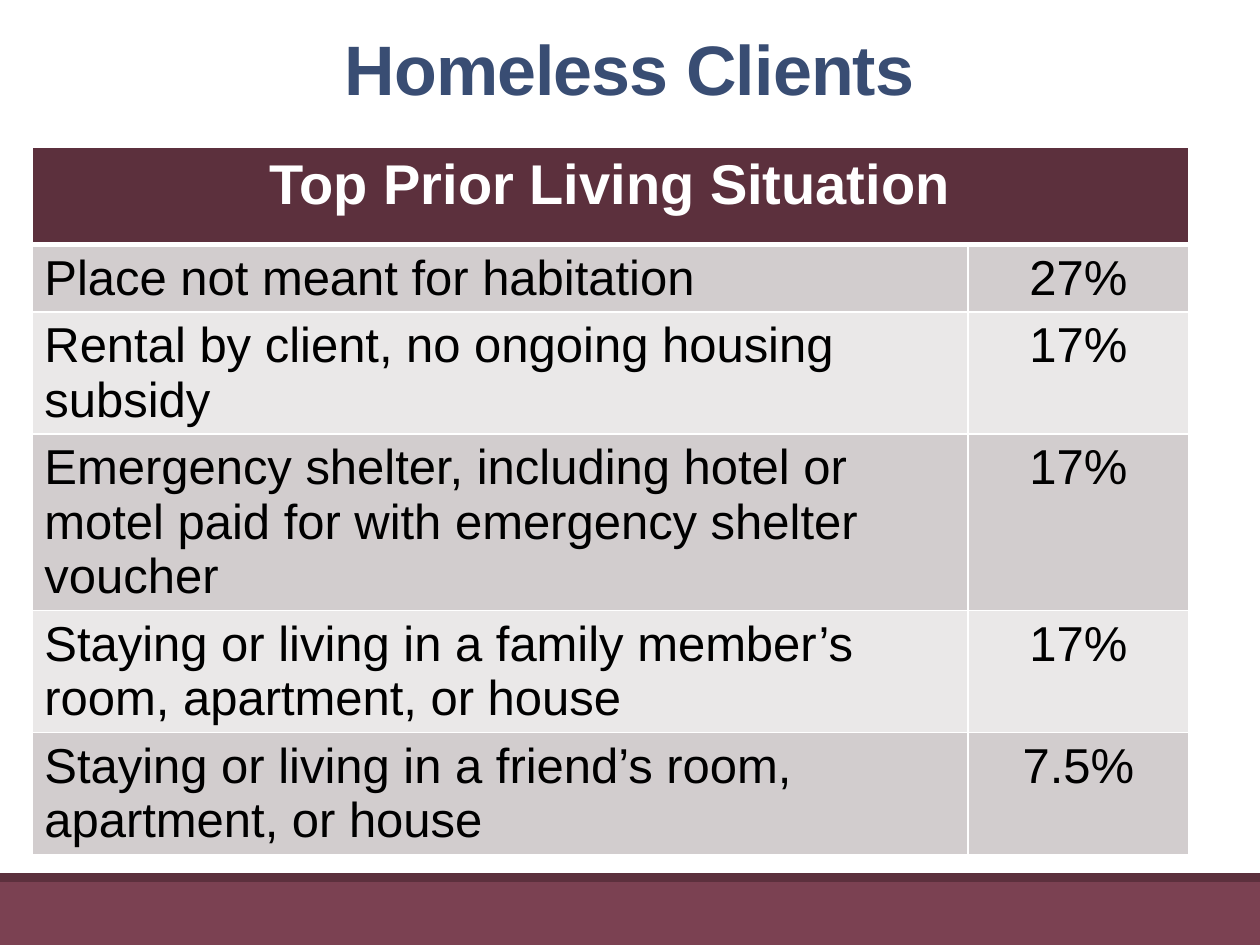
"""Build the slide on the top prior living situations of homeless clients."""
from lxml import etree
from pptx import Presentation
from pptx.dml.color import RGBColor
from pptx.enum.shapes import MSO_SHAPE
from pptx.enum.text import MSO_ANCHOR, PP_ALIGN
from pptx.oxml.ns import qn
from pptx.util import Pt

RECTANGLE = MSO_SHAPE.RECTANGLE
BOTTOM = MSO_ANCHOR.BOTTOM
LEFT, CENTER = PP_ALIGN.LEFT, PP_ALIGN.CENTER
FONT = "Arial"
COLORS = {
    "title": "394D73",
    "footer": "7B4152",
    "header": "5C303D",
    "odd": "D2CDCE",
    "even": "EAE8E8",
    "white": "FFFFFF",
    "black": "000000",
}
SITUATIONS = [
    ("Place not meant for habitation", "27%", 38.4),
    ("Rental by client, no ongoing housing subsidy", "17%", 69.7),
    ("Emergency shelter, including hotel or motel paid for with "
     "emergency shelter voucher", "17%", 101),
    ("Staying or living in a family member’s room, apartment, or house", "17%", 69.7),
    ("Staying or living in a friend’s room, apartment, or house", "7.5%", 69.7),
]


def format_text(paragraph, size, color, bold, alignment):
    paragraph.alignment = alignment
    for run in paragraph.runs:
        run.font.name = FONT
        run.font.size = Pt(size)
        run.font.bold = bold
        run.font.color.rgb = RGBColor.from_string(COLORS[color])


def paint_cell(cell, fill, top_width, bottom_width):
    properties = cell._tc.get_or_add_tcPr()
    for side, width in (("L", 1), ("R", 1), ("T", top_width), ("B", bottom_width)):
        border = etree.SubElement(properties, qn(f"a:ln{side}"), w=str(Pt(width)))
        border_fill = etree.SubElement(border, qn("a:solidFill"))
        etree.SubElement(border_fill, qn("a:srgbClr"), val=COLORS["white"])
    cell.fill.solid()
    cell.fill.fore_color.rgb = RGBColor.from_string(COLORS[fill])


prs = Presentation()
prs.slide_width, prs.slide_height = Pt(720), Pt(540)
slide = prs.slides.add_slide(prs.slide_layouts[5])

for color, top, height in (("footer", 504, 36), ("header", 499, 5)):
    band = slide.shapes.add_shape(RECTANGLE, Pt(0), Pt(top), Pt(720), Pt(height))
    band.shadow.inherit = False
    band.fill.solid()
    band.fill.fore_color.rgb = RGBColor.from_string(COLORS[color])
    band.line.fill.background()

title = slide.shapes.title
title.left, title.top, title.width, title.height = Pt(36), Pt(-48.2), Pt(643), Pt(114.5)
title.text_frame.text = "Homeless Clients"
title.text_frame.vertical_anchor = BOTTOM
heading = title.text_frame.paragraphs[0]
heading.line_spacing = 0.85
format_text(heading, 40, "title", True, CENTER)
heading._p.get_or_add_pPr().set("marL", str(Pt(4.3)))
heading.runs[0].font._element.set("spc", "-50")

table = slide.shapes.add_table(
    len(SITUATIONS) + 1, 2, Pt(18.2), Pt(84.4), Pt(661), Pt(404)
).table
table.columns[0].width, table.columns[1].width = Pt(535), Pt(126)
table.rows[0].height = Pt(55.4)

header = table.cell(0, 0)
header.merge(table.cell(0, 1))
header.text_frame.text = "Top Prior Living Situation"
format_text(header.text_frame.paragraphs[0], 32, "white", True, CENTER)
for cell in table.rows[0].cells:
    paint_cell(cell, "header", 1, 3)

for row, (situation, share, height) in enumerate(SITUATIONS, start=1):
    table.rows[row].height = Pt(height)
    for column, (text, alignment) in enumerate(((situation, LEFT), (share, CENTER))):
        cell = table.cell(row, column)
        cell.text_frame.text = text
        format_text(cell.text_frame.paragraphs[0], 28, "black", False, alignment)
        paint_cell(cell, "odd" if row % 2 else "even", 3 if row == 1 else 1, 1)

prs.save("out.pptx")
